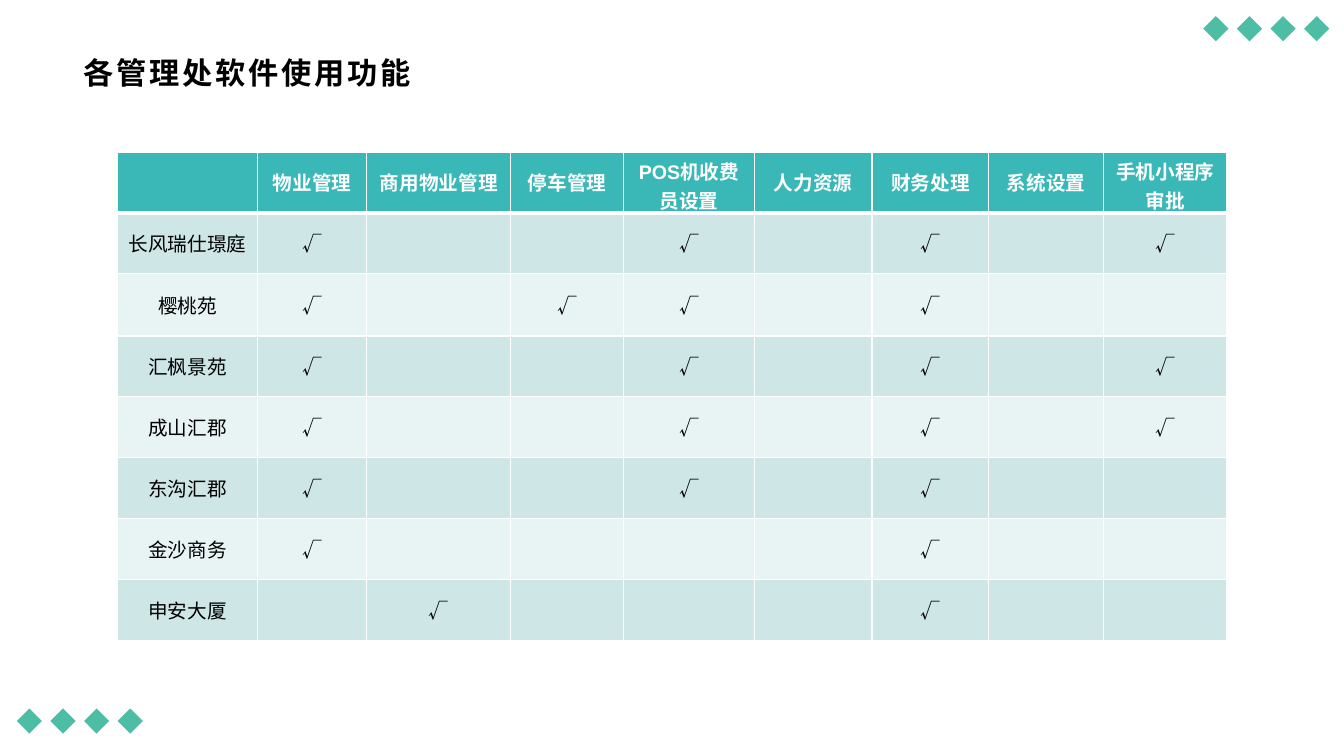
from dataclasses import dataclass

import lxml.etree
import pptx
import pptx.dml.color
import pptx.enum.lang
import pptx.enum.shapes
import pptx.enum.text
import pptx.oxml.ns
import pptx.util

Pt = pptx.util.Pt
qn = pptx.oxml.ns.qn


@dataclass(frozen=True)
class Theme:
    latin: str = "Arial"
    east_asian: str = "Noto Sans CJK JP"
    title_size: float = 21.6
    table_size: float = 14
    ink: str = "000000"
    white: str = "FFFFFF"
    diamond: str = "4EBDA5"
    header: str = "3AB7B7"
    bands: tuple = ("CEE6E6", "E8F3F3")
    thin: float = 1
    thick: float = 3


def rgb(value):
    return pptx.dml.color.RGBColor.from_string(value)


class SlideBuilder:
    def __init__(self, slide, theme):
        self.slide = slide
        self.theme = theme

    def add_text(self, paragraph, text, size, color, bold=False, latin=None):
        """Add one styled run and return its XML properties."""
        run = paragraph.add_run()
        run.text = text
        run.font.size = Pt(size)
        run.font.bold = bold
        run.font.color.rgb = rgb(color)
        run.font.name = latin or self.theme.latin
        run.font.language_id = pptx.enum.lang.MSO_LANGUAGE_ID.SIMPLIFIED_CHINESE
        properties = run._r.get_or_add_rPr()
        lxml.etree.SubElement(properties, qn("a:ea"), typeface=self.theme.east_asian)
        return properties

    def title(self, text, left, top, width, height):
        frame = self.slide.shapes.add_textbox(
            Pt(left), Pt(top), Pt(width), Pt(height)).text_frame
        frame.word_wrap = True
        frame.vertical_anchor = pptx.enum.text.MSO_ANCHOR.MIDDLE
        properties = self.add_text(frame.paragraphs[0], text,
                                   self.theme.title_size, self.theme.ink, bold=True)
        properties.set("spc", "200")

    def diamond_row(self, left, top, count=4, size=18, pitch=24):
        group = self.slide.shapes.add_group_shape()
        for position in range(count):
            diamond = group.shapes.add_shape(
                pptx.enum.shapes.MSO_SHAPE.DIAMOND,
                Pt(left + position * pitch), Pt(top), Pt(size), Pt(size))
            diamond.shadow.inherit = False
            diamond.fill.solid()
            diamond.fill.fore_color.rgb = rgb(self.theme.diamond)
            diamond.line.fill.background()

    def borders(self, cell, top, bottom):
        """Draw white cell edges; they must come before the fill in the cell XML."""
        widths = {"L": self.theme.thin, "R": self.theme.thin, "T": top, "B": bottom}
        properties = cell._tc.get_or_add_tcPr()
        for index, (side, width) in enumerate(widths.items()):
            edge = lxml.etree.Element(qn(f"a:ln{side}"), w=str(Pt(width)))
            fill = lxml.etree.SubElement(edge, qn("a:solidFill"))
            lxml.etree.SubElement(fill, qn("a:srgbClr"), val=self.theme.white)
            properties.insert(index, edge)

    def cell(self, cell, text, row):
        theme = self.theme
        is_header = row == 0
        cell.fill.solid()
        cell.fill.fore_color.rgb = rgb(
            theme.header if is_header else theme.bands[(row - 1) % 2])
        self.borders(cell, theme.thick if row == 1 else theme.thin,
                     theme.thick if is_header else theme.thin)
        cell.vertical_anchor = pptx.enum.text.MSO_ANCHOR.MIDDLE
        if text:
            paragraph = cell.text_frame.paragraphs[0]
            paragraph.alignment = pptx.enum.text.PP_ALIGN.CENTER
            self.add_text(paragraph, text, theme.table_size,
                          theme.white if is_header else theme.ink, bold=is_header,
                          latin=theme.east_asian if text == CHECK else None)

    def table(self, rows, left, top, widths, heights):
        table = self.slide.shapes.add_table(
            len(rows), len(widths), Pt(left), Pt(top),
            Pt(sum(widths)), Pt(sum(heights))).table
        for column, width in zip(table.columns, widths):
            column.width = Pt(width)
        for row, height in zip(table.rows, heights):
            row.height = Pt(height)
        for row_index, texts in enumerate(rows):
            for column_index, text in enumerate(texts):
                self.cell(table.cell(row_index, column_index), text, row_index)


CHECK = "√"
FUNCTIONS = ["物业管理", "商用物业管理", "停车管理", "POS机收费员设置", "人力资源",
             "财务处理", "系统设置", "手机小程序审批"]
USED_FUNCTIONS = {
    "长风瑞仕璟庭": {1, 4, 6, 8},
    "樱桃苑": {1, 3, 4, 6},
    "汇枫景苑": {1, 4, 6, 8},
    "成山汇郡": {1, 4, 6, 8},
    "东沟汇郡": {1, 4, 6},
    "金沙商务": {1, 6},
    "申安大厦": {2, 6},
}
COLUMN_WIDTHS = [100, 78, 103, 80.5, 93.5, 84, 83.5, 82, 88]
ROW_HEIGHTS = [43.5, 43.5, 44.5] + [43.5] * 5


def main():
    presentation = pptx.Presentation()
    presentation.slide_width = Pt(960)
    presentation.slide_height = Pt(540)
    slide = presentation.slides.add_slide(presentation.slide_layouts[6])
    builder = SlideBuilder(slide, Theme())

    builder.diamond_row(12, 506)
    builder.diamond_row(859.5, 11.5)
    builder.title("各管理处软件使用功能", 52.5, 34.5, 855, 34.5)

    rows = [[""] + FUNCTIONS]
    for office, used in USED_FUNCTIONS.items():
        checks = [CHECK if number in used else ""
                  for number in range(1, len(FUNCTIONS) + 1)]
        rows.append([office] + checks)
    builder.table(rows, 84, 108.5, COLUMN_WIDTHS, ROW_HEIGHTS)

    presentation.save("out.pptx")


if __name__ == "__main__":
    main()
